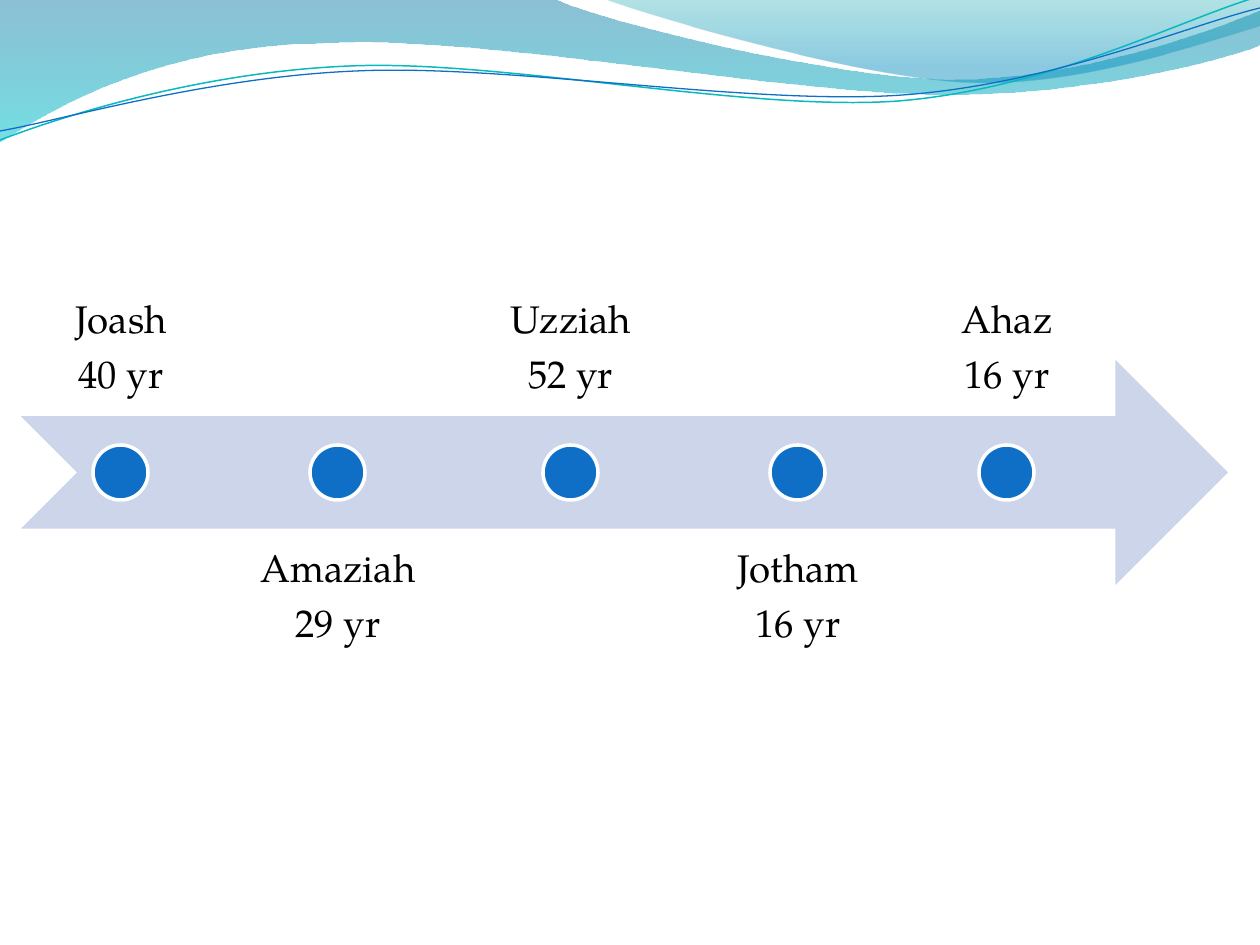
from dataclasses import dataclass

from pptx import Presentation, util as u
from pptx.dml.color import RGBColor
from pptx.enum import shapes, text
from pptx.oxml.ns import qn
from lxml import etree

SCALE = u.Inches(1) / 126


@dataclass(frozen=True)
class Theme:
    """Colours, font and sizes of the slide."""
    font: str = "TeX Gyre Pagella"
    size: int = 22
    ink: str = "000000"
    arrow: str = "CCD5EA"
    dot: str = "0F6FC6"
    ring: str = "FFFFFF"
    teal: str = "0AB8BF"
    back: tuple = ((0, "0074A1", 45), (1, "00C6CF", 55))
    front: tuple = ((0, "00A1A9", 30), (0.8, "008BBF", 45))


THEME = Theme()

BACK = [(0, 0), (554, -1), (600, 21, 837, 79, 955, 79),
        (1075, 79, 1207, 33, 1260, 11), (1261, 45),
        (1239, 55, 1096, 96, 940, 94), (784, 94, 481, 35, 324, 43),
        (163, 45, 58, 105, -1, 142)]
FRONT = [(604, -1), (641, 14, 859, 78, 969, 82),
         (1079, 87, 1211, 40, 1260, 26), (1260, 0)]
TEAL = [(0, 140), (60, 117, 199, 72, 349, 66),
        (498, 59, 747, 112, 898, 101), (1049, 89, 1182, 19, 1257, -3)]
BLUE = [(0, 131), (59, 121, 207, 77, 357, 71),
        (508, 64, 752, 106, 903, 95), (1053, 84, 1186, 26, 1260, 8)]

KINGS = [("Joash", "40 yr", 21, 200), ("Amaziah", "29 yr", 232, 212),
         ("Uzziah", "52 yr", 454, 233), ("Jotham", "16 yr", 711, 174),
         ("Ahaz", "16 yr", 907, 200)]
HIGH, TOP, LOW, TALL, DOT = 193, 360, 528, 225, 55


def px(num):
    """Turn pixels into EMU."""
    return u.Emu(round(num * SCALE))


def rgb(code):
    """Turn a hex code into a colour."""
    return RGBColor.from_string(code)


def put(obj, form):
    """Set attributes from a dict of format values."""
    for key, val in form.items():
        setattr(obj, key, val)


def bend(shape, curves):
    """Turn the straight segments that have control points into curves."""
    lines = list(shape.element.spPr.iter(qn("a:lnTo")))
    for line, seg in zip(lines, curves):
        if len(seg) == 2:
            continue
        line.tag = qn("a:cubicBezTo")
        line.clear()
        for x, y in zip(seg[::2], seg[1::2]):
            etree.SubElement(line, qn("a:pt"), x=str(px(x) - shape.left),
                             y=str(px(y) - shape.top))


def outline(slide, curves, close):
    """Build a freeform of lines and cubic curves."""
    first, *rest = [(px(seg[-2]), px(seg[-1])) for seg in curves]
    pen = slide.shapes.build_freeform(*first, scale=1.0)
    pen.add_line_segments(rest, close=close)
    shape = pen.convert_to_shape()
    shape.shadow.inherit = False
    bend(shape, curves[1:])
    return shape


def wave(slide, curves, stops):
    """Draw a wave with a see-through gradient running down."""
    shape = outline(slide, curves, True)
    shape.line.fill.background()
    shape.fill.gradient()
    shape.fill.gradient_angle = 270
    for stop, (pos, code, _) in zip(shape.fill.gradient_stops, stops):
        stop.position = pos
        stop.color.rgb = rgb(code)
    tags = shape.element.spPr.iter(qn("a:srgbClr"))
    for tag, (_, _, alpha) in zip(tags, stops):
        etree.SubElement(tag, qn("a:alpha"), val=str(alpha * 1000))


def strand(slide, curves, code, width):
    """Draw a thin curved line."""
    shape = outline(slide, curves, False)
    shape.fill.background()
    shape.line.color.rgb = rgb(code)
    shape.line.width = u.Pt(width)


def solid(slide, kind, box, code, ring=None):
    """Draw a filled preset shape."""
    shape = slide.shapes.add_shape(kind, *map(px, box))
    shape.shadow.inherit = False
    shape.fill.solid()
    shape.fill.fore_color.rgb = rgb(code)
    if ring:
        shape.line.color.rgb = rgb(ring)
        shape.line.width = u.Pt(2)
    else:
        shape.line.fill.background()


def label(slide, box, lines, anchor):
    """Write centred lines in a text box."""
    frame = slide.shapes.add_textbox(*map(px, box)).text_frame
    put(frame, {"word_wrap": True, "vertical_anchor": anchor})
    put(frame, {f"margin_{side}": px(21) for side in ("left", "top", "right", "bottom")})
    frame.text = "\n".join(lines)
    for para in frame.paragraphs:
        put(para, {"alignment": text.PP_ALIGN.CENTER, "line_spacing": 0.9,
                   "space_after": u.Pt(8)})
        after = para._p.pPr.find(qn("a:spcAft"))
        after.clear()
        etree.SubElement(after, qn("a:spcPct"), val="35000")
        font = para.runs[0].font
        put(font, {"name": THEME.font, "size": u.Pt(THEME.size)})
        font.color.rgb = rgb(THEME.ink)


def king(slide, rank, name, reign, left, wide):
    """Place a dot and its label, above and below in turn."""
    spots = ((HIGH, text.MSO_ANCHOR.BOTTOM), (LOW, text.MSO_ANCHOR.TOP))
    top, anchor = spots[rank % 2]
    label(slide, (left, top, wide, TALL), (name, reign), anchor)
    box = (left + (wide - DOT) // 2, TOP + (TALL - DOT) // 2, DOT, DOT)
    solid(slide, shapes.MSO_SHAPE.OVAL, box, THEME.dot, THEME.ring)


def main():
    """Build the timeline slide."""
    deck = Presentation()
    put(deck, {"slide_width": px(1260), "slide_height": px(945)})
    slide = deck.slides.add_slide(deck.slide_layouts[6])
    wave(slide, BACK, THEME.back)
    wave(slide, FRONT, THEME.front)
    strand(slide, TEAL, THEME.teal, 0.85)
    strand(slide, BLUE, THEME.dot, 0.75)
    solid(slide, shapes.MSO_SHAPE.NOTCHED_RIGHT_ARROW,
          (21, TOP, 1207, TALL), THEME.arrow)
    for rank, item in enumerate(KINGS):
        king(slide, rank, *item)
    deck.save("out.pptx")


if __name__ == "__main__":
    main()
